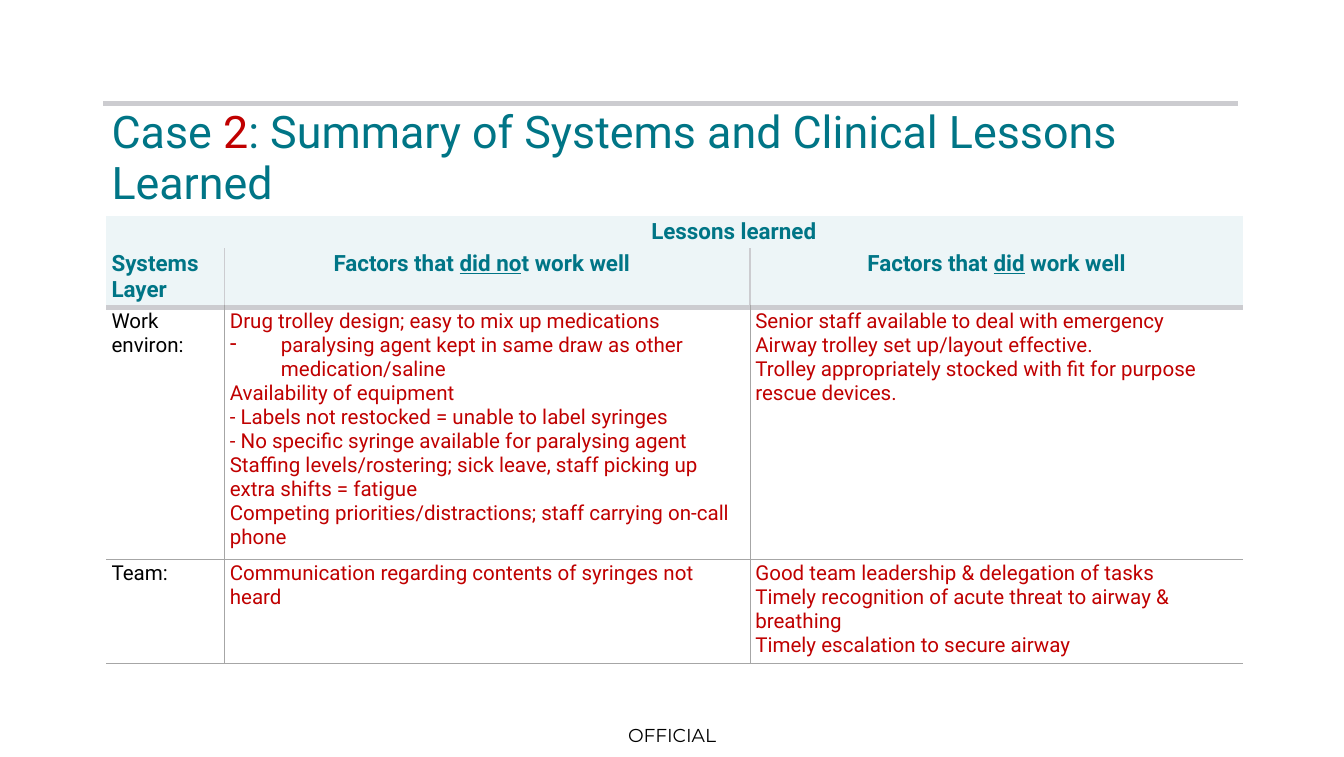
from dataclasses import dataclass

from lxml import etree
from pptx import Presentation
from pptx.dml.color import RGBColor
from pptx.enum.shapes import MSO_CONNECTOR
from pptx.enum.text import MSO_ANCHOR, PP_ALIGN
from pptx.oxml.ns import qn
from pptx.util import Inches, Pt

LEFT, CENTER = PP_ALIGN.LEFT, PP_ALIGN.CENTER
TOP, MIDDLE = MSO_ANCHOR.TOP, MSO_ANCHOR.MIDDLE
STRAIGHT = MSO_CONNECTOR.STRAIGHT

TEAL = RGBColor(0x00, 0x75, 0x86)
RED = RGBColor(0xC0, 0x00, 0x00)
BLACK = RGBColor(0x00, 0x00, 0x00)
PALE = RGBColor(0xED, 0xF5, 0xF7)
SILVER = RGBColor(0xCC, 0xCC, 0xD0)
GREY = RGBColor(0xA6, 0xA6, 0xA6)

SLIDE_WIDTH, SLIDE_HEIGHT = Inches(10), Inches(5.63)


@dataclass(frozen=True)
class Span:
    text: str
    color: RGBColor | None = None
    underline: bool = False


@dataclass(frozen=True)
class Line:
    """One paragraph; a dashed line hangs behind a dash bullet."""
    spans: tuple[Span, ...]
    dashed: bool = False


@dataclass(frozen=True)
class Cell:
    lines: tuple[Line, ...] = ()
    color: RGBColor = RED
    align: PP_ALIGN = LEFT
    inset_right: float = 0.04


@dataclass(frozen=True)
class Rule:
    color: RGBColor
    points: float


HEAD_RULE, THICK_RULE, THIN_RULE = Rule(SILVER, 1), Rule(SILVER, 3), Rule(GREY, 0.5)
# Vertical rule inside each row; horizontal rule above each row and below the last.
VERTICAL_RULES = (None, HEAD_RULE, THIN_RULE, THIN_RULE)
HORIZONTAL_RULES = (None, None, THICK_RULE, THIN_RULE, THIN_RULE)
HEADER_ROWS = 2
COLUMN_SHARES = (8.8, 39.1, 36.7)
ROW_SHARES = (4.23, 7.54, 32.33, 13.41)


def lines(*texts: str) -> tuple[Line, ...]:
    return tuple(Line((Span(text),)) for text in texts)


ROWS = (
    (Cell(),
     Cell(lines("Lessons learned"), TEAL, CENTER),
     Cell()),
    (Cell(lines("Systems Layer"), TEAL),
     Cell((Line((Span("Factors that "), Span("did no", underline=True),
                 Span("t work well"))),), TEAL, CENTER, 0.12),
     Cell((Line((Span("Factors that "), Span("did", underline=True),
                 Span(" work well"))),), TEAL, CENTER)),
    (Cell(lines("Work environ:"), BLACK),
     Cell((
         *lines("Drug trolley design; easy to mix up medications"),
         Line((Span("paralysing agent kept in same draw as other medication/saline"),),
              dashed=True),
         *lines("Availability of equipment",
                "- Labels not restocked = unable to label syringes",
                "- No specific syringe available for paralysing agent",
                "Staffing levels/rostering; sick leave, staff picking up extra shifts = fatigue",
                "Competing priorities/distractions; staff carrying on-call phone"))),
     Cell(lines("Senior staff available to deal with emergency",
                "Airway trolley set up/layout effective.",
                "Trolley appropriately stocked with fit for purpose rescue devices."))),
    (Cell(lines("Team:"), BLACK),
     Cell(lines("Communication regarding contents of syringes not heard")),
     Cell(lines("Good team leadership & delegation of tasks",
                "Timely recognition of acute threat to airway & breathing",
                "Timely escalation to secure airway"))),
)


def across(percent: float) -> int:
    return round(SLIDE_WIDTH * percent / 100)


def down(percent: float) -> int:
    return round(SLIDE_HEIGHT * percent / 100)


def hang_dash(para) -> None:
    properties = para._p.get_or_add_pPr()
    properties.set("marL", str(Inches(0.38)))
    properties.set("indent", str(-Inches(0.38)))
    etree.SubElement(properties, qn("a:buChar"), char="-")
    tabs = etree.SubElement(properties, qn("a:tabLst"))
    etree.SubElement(tabs, qn("a:tab"), pos=str(Inches(0.5)), algn="l")


def write(frame, content: tuple[Line, ...], *, size: float, color: RGBColor,
          font: str = "Roboto", bold: bool = False, align: PP_ALIGN = LEFT,
          spacing: float | None = None) -> None:
    for index, line in enumerate(content):
        para = frame.add_paragraph() if index else frame.paragraphs[0]
        if line.dashed:
            hang_dash(para)
        para.alignment = align
        if spacing:
            para.line_spacing = spacing
        for part in line.spans:
            span = para.add_run()
            span.text = part.text
            span.font.name, span.font.size = font, Pt(size)
            span.font.bold, span.font.underline = bold, part.underline
            span.font.color.rgb = part.color or color


def add_text(page, left: float, top: float, width: float, height: float,
             content: tuple[Line, ...], *, inset: float = 0,
             anchor: MSO_ANCHOR = TOP, **text_format) -> None:
    box = page.shapes.add_textbox(across(left), down(top), across(width), down(height))
    frame = box.text_frame
    frame.word_wrap, frame.vertical_anchor = True, anchor
    frame.margin_left = frame.margin_right = Inches(inset)
    frame.margin_top = frame.margin_bottom = Inches(inset)
    write(frame, content, **text_format)


def add_top_rule(page) -> None:
    rule = page.shapes.add_connector(STRAIGHT, across(7.7), down(13.68),
                                     across(92.1), down(13.68))
    rule.line.color.rgb, rule.line.width = SILVER, Pt(3)
    etree.SubElement(rule._element.spPr, qn("a:effectLst"))


def set_border(cell, side: str, rule: Rule | None) -> None:
    border = etree.SubElement(cell._tc.get_or_add_tcPr(), qn(f"a:ln{side}"))
    if rule is None:
        etree.SubElement(border, qn("a:noFill"))
        return
    border.set("w", str(Pt(rule.points)))
    fill = etree.SubElement(border, qn("a:solidFill"))
    etree.SubElement(fill, qn("a:srgbClr"), val=str(rule.color))


def fill_cell(cell, content: Cell, row: int, column: int) -> None:
    header = row < HEADER_ROWS
    cell.margin_left, cell.margin_right = Inches(0.04), Inches(content.inset_right)
    cell.margin_top = cell.margin_bottom = Inches(0.02)
    vertical = VERTICAL_RULES[row]
    set_border(cell, "L", vertical if column else None)
    set_border(cell, "R", vertical if column < len(COLUMN_SHARES) - 1 else None)
    set_border(cell, "T", HORIZONTAL_RULES[row])
    set_border(cell, "B", HORIZONTAL_RULES[row + 1])
    if header:
        cell.fill.solid()
        cell.fill.fore_color.rgb = PALE
    else:
        cell.fill.background()
    if content.lines:
        write(cell.text_frame, content.lines, size=12 if header else 11,
              color=content.color, bold=header, align=content.align)
    else:
        # Keeps an empty cell from stretching its row.
        etree.SubElement(cell.text_frame.paragraphs[0]._p, qn("a:endParaRPr"), sz="1000")


def add_lessons_table(page) -> None:
    table = page.shapes.add_table(
        len(ROW_SHARES), len(COLUMN_SHARES), across(7.9), down(28.5),
        across(sum(COLUMN_SHARES)), down(sum(ROW_SHARES))).table
    table.first_row = table.horz_banding = False
    for column, share in zip(table.columns, COLUMN_SHARES):
        column.width = across(share)
    for row, share in zip(table.rows, ROW_SHARES):
        row.height = down(share)
    for row, contents in enumerate(ROWS):
        for column, content in enumerate(contents):
            fill_cell(table.cell(row, column), content, row, column)
    table.cell(0, 1).merge(table.cell(0, 2))


def main() -> None:
    deck = Presentation()
    deck.slide_width, deck.slide_height = SLIDE_WIDTH, SLIDE_HEIGHT
    page = deck.slides.add_slide(deck.slide_layouts[6])
    add_text(page, 44.9, 94.5, 10.2, 5.5, lines("OFFICIAL"), anchor=MIDDLE, size=10,
             color=BLACK, font="Montserrat", align=CENTER, spacing=0.98)
    add_top_rule(page)
    title = Line((Span("Case "), Span("2", RED),
                  Span(": Summary of Systems and Clinical Lessons Learned")))
    add_text(page, 7.9, 13.5, 84.6, 16.16, (title,), inset=0.04, size=24,
             color=TEAL, spacing=0.95)
    add_lessons_table(page)
    deck.save("out.pptx")


if __name__ == "__main__":
    main()
